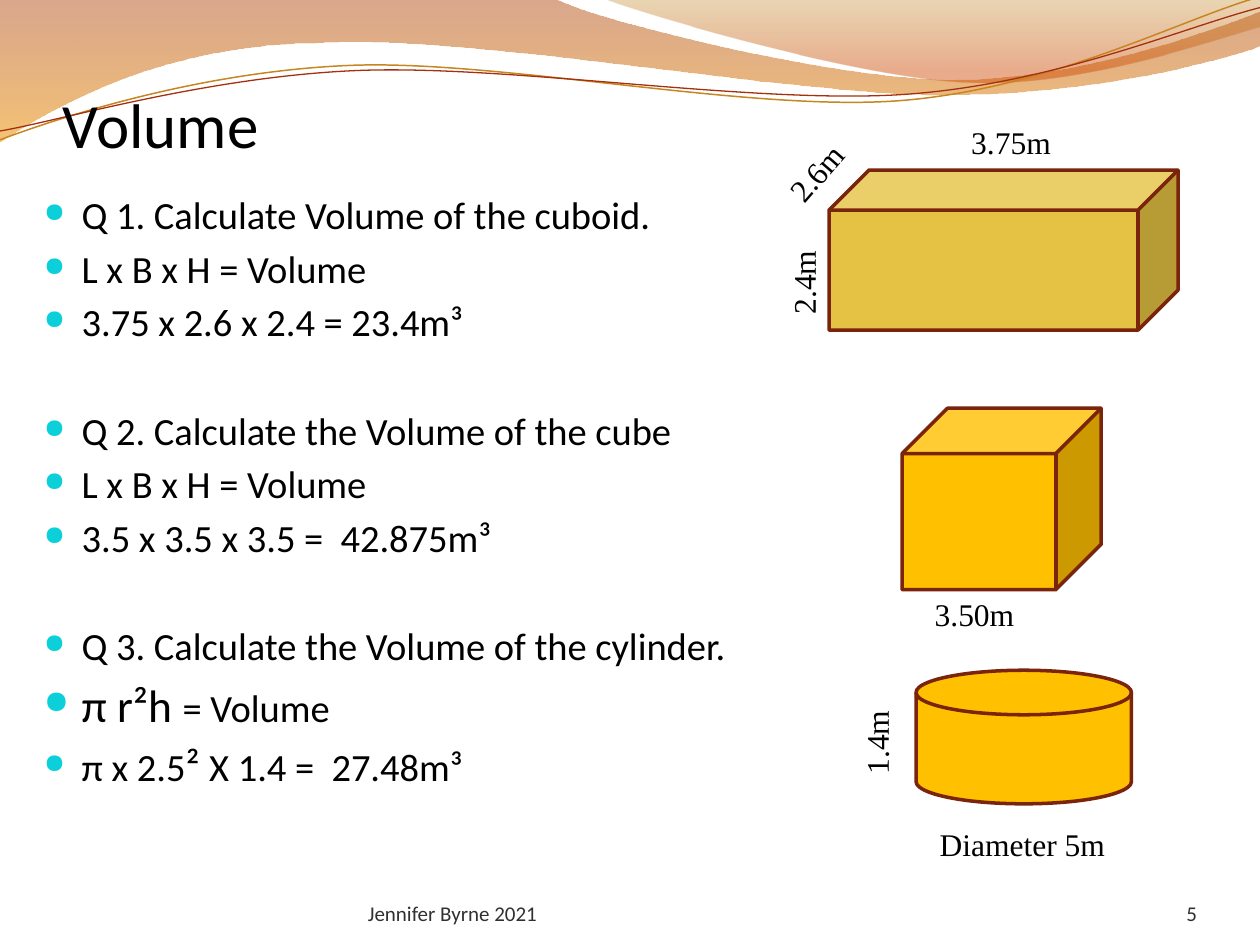
"""Build the Volume slide with three worked questions and labelled solids."""
from math import cos, radians, sin
from lxml import etree
from pptx import Presentation
from pptx.dml.color import RGBColor
from pptx.enum.shapes import MSO_SHAPE
from pptx.enum.text import MSO_ANCHOR, PP_ALIGN
from pptx.oxml.ns import qn
from pptx.util import Inches, Pt

CUBE, CYLINDER = MSO_SHAPE.CUBE, MSO_SHAPE.FLOWCHART_MAGNETIC_DISK
LEFT, RIGHT = PP_ALIGN.LEFT, PP_ALIGN.RIGHT
TOP, BOTTOM = MSO_ANCHOR.TOP, MSO_ANCHOR.BOTTOM
BODY_FONT, LABEL_FONT = "Calibri", "Times New Roman"
BLACK, GREY, BROWN, GOLD, TURQUOISE = "000000", "303030", "7A240B", "FFC000", "0BD0D9"
BODY_SIZE, LINE_GAP_SHARE, QUESTION_GAP = 22, 0.19, 35.5
STRAND_TILT = 2.7

# Each path is a start point followed by lines (2 numbers) or Bezier curves (6 numbers).
WAVES = [
    ((-0.01, -0.01, 10.02, 1.14),
     [(0, -0.01), (4.4, -0.01), (4.76, 0.17, 6.64, 0.63, 7.58, 0.63),
      (8.53, 0.63, 9.58, 0.26, 10, 0.09), (10.01, 0.36),
      (9.83, 0.44, 8.7, 0.76, 7.46, 0.75), (6.22, 0.75, 3.82, 0.28, 2.57, 0.34),
      (1.29, 0.35, 0.46, 0.83, -0.01, 1.13), (0, -0.01)],
     [(0, "AC3D02", 45), (1, "EE9100", 55)]),
    ((4.79, -0.01, 5.21, 0.7),
     [(4.79, -0.01), (5.09, 0.11, 6.82, 0.62, 7.69, 0.65),
      (8.56, 0.69, 9.61, 0.32, 10, 0.21), (10, 0), (4.79, -0.01)],
     [(0, "BB7507", 30), (0.8, "CF4800", 45)]),
]
STRANDS = [
    ((-0.02, 0.22, 10.02, 0.71),
     [(0, 1.11), (0.48, 0.93, 1.58, 0.57, 2.77, 0.52),
      (3.95, 0.47, 5.93, 0.89, 7.13, 0.8), (8.33, 0.71, 9.38, 0.15, 9.98, -0.02)],
     "C78621", 0.85),
    ((-0.02, 0.3, 10.03, 0.58),
     [(0, 1.04), (0.47, 0.96, 1.64, 0.61, 2.83, 0.56),
      (4.03, 0.51, 5.97, 0.83, 7.17, 0.75), (8.36, 0.67, 9.41, 0.21, 10, 0.06)],
     "A5300F", 0.75),
]
QUESTIONS = [
    [[("Q 1. Calculate Volume of the cuboid.", 22)],
     [("L x B x H = Volume", 22)],
     [("3.75 x 2.6 x 2.4 = 23.4m³", 22)]],
    [[("Q 2. Calculate the Volume of the cube", 22)],
     [("L x B x H = Volume", 22)],
     [("3.5 x 3.5 x 3.5 =  42.875m³", 22)]],
    [[("Q 3. Calculate the Volume of the cylinder.", 22)],
     [("π r²h ", 26), ("= Volume", 22)],
     [("π x 2.5", 22), ("² ", 24), ("X 1.4 =  27.48m³", 22)]],
]
FRAME_TEXTS = [
    ("Volume", (0.5, 0.58, 9, 0.7), 36, BLACK, LEFT, 0.05),
    ("Jennifer Byrne 2021", (2.92, 6.95, 3.67, 0.4), 12, GREY, LEFT, 0),
    ("5", (8.67, 6.95, 0.83, 0.4), 12, GREY, RIGHT, 0),
]
SOLIDS = [
    (CUBE, (6.58, 1.35, 2.77, 1.27), "E5C243"),
    (CUBE, (7.16, 3.24, 1.58, 1.44), GOLD),
    (CYLINDER, (7.27, 5.32, 1.71, 1.06), GOLD),
]
LABELS = [
    ("3.75m", (7.61, 0.93, 0.84, 0.4), 0, False),
    ("2.4m", (6.02, 2.04, 0.71, 0.4), 270, False),
    ("2.6m", (6.07, 1.05, 1.02, 0.4), 311, True),
    ("3.50m", (7.32, 4.67, 0.84, 0.4), 0, False),
    ("Diameter 5m", (7.36, 6.5, 1.53, 0.4), 0, False),
    ("1.4m", (6.6, 5.69, 0.71, 0.4), 270, False),
]


def colour(value):
    return RGBColor.from_string(value)


def turn(part, place, angle):
    """Turn the points of a path part clockwise about the middle of its box."""
    left, top, width, height = place
    middle_x, middle_y = left + width / 2, top + height / 2
    c, s = cos(radians(angle)), sin(radians(angle))
    turned = []
    for x, y in zip(part[::2], part[1::2]):
        x, y = x - middle_x, y - middle_y
        turned += [middle_x + x * c - y * s, middle_y + x * s + y * c]
    return turned


def add_outline(page, place, parts, close, tilt=0):
    parts = [turn(part, place, tilt) for part in parts]
    ends = [(Inches(part[-2]), Inches(part[-1])) for part in parts]
    builder = page.shapes.build_freeform(*ends[0])
    builder.add_line_segments(ends[1:], close=close)
    shape = builder.convert_to_shape()
    shape.left, shape.top, shape.width, shape.height = map(Inches, place)
    shape.rotation = -tilt
    shape.shadow.inherit = False
    outline = next(shape._element.iter(qn("a:path")))
    outline.set("w", str(shape.width))
    outline.set("h", str(shape.height))
    for segment, part in zip(list(outline), parts):
        if len(part) == 6:
            curve = etree.Element(qn("a:cubicBezTo"))
            outline.replace(segment, curve)
            segment = curve
        for point in list(segment):
            segment.remove(point)
        for x, y in zip(part[::2], part[1::2]):
            etree.SubElement(segment, qn("a:pt"), x=str(Inches(x) - shape.left),
                             y=str(Inches(y) - shape.top))
    return shape


def add_wave(page, place, parts, stops):
    wave = add_outline(page, place, parts, True)
    wave.line.fill.background()
    wave.fill.gradient()
    wave.fill.gradient_angle = 270
    for stop, (position, value, _) in zip(wave.fill.gradient_stops, stops):
        stop.position = position
        stop.color.rgb = colour(value)
    tints = wave._element.spPr.iter(qn("a:srgbClr"))
    for tint, (_, _, opacity) in zip(list(tints), stops):
        etree.SubElement(tint, qn("a:alpha"), val=str(opacity * 1000))


def add_strand(page, place, parts, value, width):
    strand = add_outline(page, place, parts, False, STRAND_TILT)
    strand.fill.background()
    strand.line.color.rgb = colour(value)
    strand.line.width = Pt(width)


def add_solid(page, kind, place, value):
    solid = page.shapes.add_shape(kind, *map(Inches, place))
    solid.shadow.inherit = False
    solid.fill.solid()
    solid.fill.fore_color.rgb = colour(value)
    solid.line.color.rgb = colour(BROWN)
    solid.line.width = Pt(2)


def set_font(para, name, size, value):
    para.font.name = name
    para.font.size = Pt(size)
    para.font.color.rgb = colour(value)


def add_box(page, place, anchor=TOP, wrap=True):
    box = page.shapes.add_textbox(*map(Inches, place))
    box.text_frame.word_wrap = wrap
    box.text_frame.vertical_anchor = anchor
    return box


def add_bullet(para):
    props = para._p.get_or_add_pPr()
    props.set("marL", str(Inches(0.3)))
    props.set("indent", str(Inches(-0.3)))
    tint = etree.Element(qn("a:buClr"))
    etree.SubElement(tint, qn("a:srgbClr"), val=TURQUOISE)
    size = etree.Element(qn("a:buSzPct"), val="70000")
    mark = etree.Element(qn("a:buChar"), char="●")
    for position, item in enumerate((tint, size, mark), start=1):
        props.insert(position, item)


def add_questions(page):
    frame = add_box(page, (0.25, 1.47, 9.25, 5.46)).text_frame
    para = frame.paragraphs[0]
    for number, question in enumerate(QUESTIONS):
        for row, spans in enumerate(question):
            if number or row:
                para = frame.add_paragraph()
            gap = round(LINE_GAP_SHARE * max(size for _, size in spans), 1)
            para.space_before = Pt(QUESTION_GAP if number and not row else gap)
            set_font(para, BODY_FONT, BODY_SIZE, BLACK)
            add_bullet(para)
            for text, size in spans:
                span = para.add_run()
                span.text = text
                span.font.size = Pt(size)


def main():
    deck = Presentation()
    deck.slide_width, deck.slide_height = Inches(10), Inches(7.5)
    page = deck.slides.add_slide(deck.slide_layouts[6])
    for wave in WAVES:
        add_wave(page, *wave)
    for strand in STRANDS:
        add_strand(page, *strand)
    add_questions(page)
    for text, place, size, value, align, top in FRAME_TEXTS:
        frame = add_box(page, place, BOTTOM).text_frame
        frame.margin_left = frame.margin_right = frame.margin_bottom = 0
        frame.margin_top = Inches(top)
        para = frame.paragraphs[0]
        para.text, para.alignment = text, align
        set_font(para, BODY_FONT, size, value)
    for solid in SOLIDS:
        add_solid(page, *solid)
    for text, place, angle, wrap in LABELS:
        box = add_box(page, place, wrap=wrap)
        box.rotation = angle
        para = box.text_frame.paragraphs[0]
        para.text = text
        set_font(para, LABEL_FONT, 18, BLACK)
    deck.save("out.pptx")


if __name__ == "__main__":
    main()
